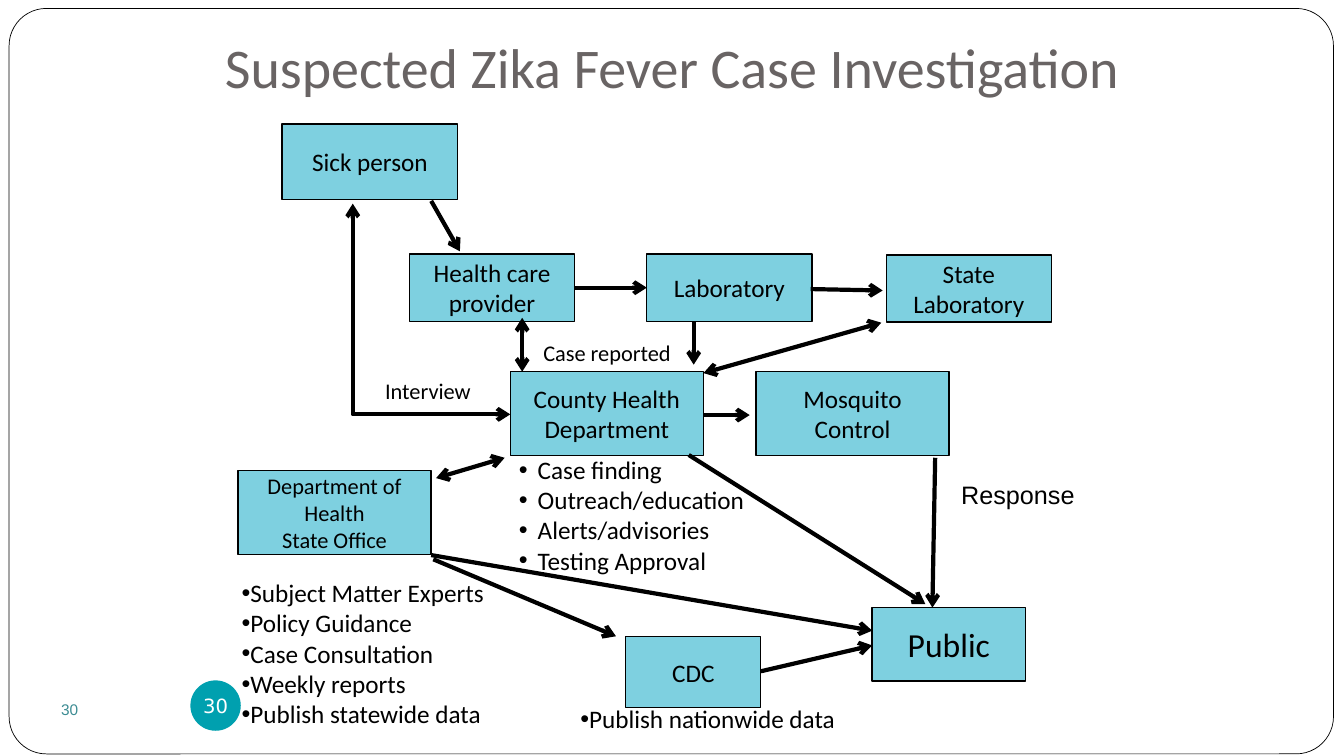
from pptx import Presentation
from pptx.dml.color import RGBColor
from pptx.enum.shapes import MSO_CONNECTOR, MSO_SHAPE
from pptx.enum.text import MSO_ANCHOR, MSO_AUTO_SIZE, PP_ALIGN
from pptx.oxml.ns import qn
from pptx.util import Pt
from lxml.etree import SubElement


def hue(code):
    return RGBColor.from_string(code)


class Chart:
    """Holds the style and the slide, and draws each kind of element."""

    face = "Calibri"
    ink = "000000"
    tint = "7ED0E0"

    def __init__(self, slide):
        self.shapes = slide.shapes

    def words(self, frame, lines, size, face=None, ink=None, align=PP_ALIGN.LEFT,
              mark=False, hang=0):
        for i, line in enumerate(lines):
            para = frame.add_paragraph() if i else frame.paragraphs[0]
            para.text = line
            para.alignment = align
            if mark:
                props = para._p.get_or_add_pPr()
                props.set("marL", str(Pt(hang)))
                props.set("indent", str(-Pt(hang)))
                SubElement(props, qn("a:buFont")).set("typeface", "Arial")
                SubElement(props, qn("a:buChar")).set("char", "•")
            para.font.size = Pt(size)
            para.font.name = face or self.face
            para.font.color.rgb = hue(ink or self.ink)

    def shape(self, kind, area, fill=None, line=None):
        item = self.shapes.add_shape(kind, *map(Pt, area))
        item.shadow.inherit = False
        if fill:
            item.fill.solid()
            item.fill.fore_color.rgb = hue(fill)
        else:
            item.fill.background()
        if line:
            item.line.color.rgb = hue(self.ink)
            item.line.width = Pt(line)
        else:
            item.line.fill.background()
        return item

    def frame(self, area):
        item = self.shape(MSO_SHAPE.ROUNDED_RECTANGLE, area, "FFFFFF", 0.5)
        item.adjustments[0] = 0.05

    def title(self, area, text):
        frame = self.shapes.add_textbox(*map(Pt, area)).text_frame
        frame.word_wrap = True
        frame.vertical_anchor = MSO_ANCHOR.BOTTOM
        frame.margin_bottom = Pt(7.2)
        self.words(frame, [text], 40, ink="696464", align=PP_ALIGN.CENTER)

    def box(self, area, text, size=18):
        frame = self.shape(MSO_SHAPE.RECTANGLE, area, self.tint, 1).text_frame
        frame.word_wrap = True
        frame.vertical_anchor = MSO_ANCHOR.MIDDLE
        self.words(frame, [text], size, align=PP_ALIGN.CENTER)

    def label(self, area, lines, size=18, **style):
        frame = self.shapes.add_textbox(*map(Pt, area)).text_frame
        frame.word_wrap = False
        frame.auto_size = MSO_AUTO_SIZE.SHAPE_TO_FIT_TEXT
        self.words(frame, lines, size, **style)

    def badge(self, area, text, size, face, ink, align, fill=None):
        frame = self.shape(MSO_SHAPE.OVAL, area, fill).text_frame
        frame.word_wrap = False
        frame.vertical_anchor = MSO_ANCHOR.MIDDLE
        frame.margin_left = frame.margin_right = 0
        frame.margin_top = frame.margin_bottom = 0
        self.words(frame, [text], size, face, ink, align)

    def arrow(self, ends, both=False, bent=False):
        kind = MSO_CONNECTOR.ELBOW if bent else MSO_CONNECTOR.STRAIGHT
        item = self.shapes.add_connector(kind, *map(Pt, ends))
        item.line.color.rgb = hue(self.ink)
        item.line.width = Pt(3)
        props = item._element.spPr
        if bent:
            props.find(qn("a:prstGeom")).set("prst", "bentConnector2")
        for tip in ("a:headEnd", "a:tailEnd") if both else ("a:tailEnd",):
            SubElement(props.find(qn("a:ln")), qn(tip)).set("type", "arrow")
        SubElement(props, qn("a:effectLst"))


def main():
    deck = Presentation()
    deck.slide_width, deck.slide_height = Pt(960), Pt(540)
    chart = Chart(deck.slides.add_slide(deck.slide_layouts[6]))

    chart.frame((6.5, 6, 946, 532.5))
    chart.title((120, 12.5, 720, 66), "Suspected Zika Fever Case Investigation")
    chart.badge((15, 489, 48, 36), "30", 11, "Arial", "3C8C93", PP_ALIGN.RIGHT)

    small, large = (118, 48), (138, 60)
    for spot, span, text, size in (
        ((201.5, 88.5), (125.5, 54), "Sick person", 18),
        ((292.5, 181.5), small, "Health care provider", 18),
        ((462, 181.5), small, "Laboratory", 18),
        ((633, 182), small, "State Laboratory", 18),
        ((364.5, 265.5), large, "County Health Department", 18),
        ((540, 265.5), large, "Mosquito Control", 18),
        ((170, 336), large, "Department of Health\vState Office", 16),
        ((447, 454.5), (96.5, 51), "CDC", 18),
        ((623, 434), (109.5, 52.5), "Public", 24),
    ):
        chart.box(spot + span, text, size)

    for ends in (
        (308, 143.5, 328.5, 179.5),
        (410, 205.5, 462, 205.5),
        (579, 206.5, 630.5, 207.5),
        (495.5, 229.5, 495.5, 260.5),
        (502.5, 296.5, 535.5, 296.5),
        (492, 325, 661, 431.5),
        (668, 327, 666, 434),
        (308, 396.5, 623, 450.5),
        (309.5, 399.5, 440, 454.5),
        (543.5, 479.5, 623, 461),
    ):
        chart.arrow(ends)
    for ends in (
        (311.5, 341.5, 360.5, 327),
        (502.5, 266.5, 629.5, 230.5),
        (373, 265.5, 373, 227),
    ):
        chart.arrow(ends, both=True)
    chart.arrow((364.5, 296, 252, 145.5), both=True, bent=True)

    chart.label((381, 239, 107.5, 26.5), ["Case reported"], 16)
    chart.label((268, 265.5, 79, 26.5), ["Interview"], 16)
    chart.label((679.5, 339, 96.5, 29), ["Response"], face="Arial")
    chart.label((363.5, 321, 178, 94.5), [
        "Case finding", "Outreach/education", "Alerts/advisories",
        "Testing Approval"], mark=True, hang=13.5)
    chart.badge((136, 486, 36, 36), "30", 14, "DejaVu Sans", "FFFFFF",
                PP_ALIGN.CENTER, "00A0AF")
    chart.label((165.5, 409, 192, 116.5), [
        "Subject Matter Experts", "Policy Guidance", "Case Consultation",
        "Weekly reports", "Publish statewide data"], mark=True)
    chart.label((407.5, 499, 201.5, 29), ["Publish nationwide data"], mark=True)

    deck.save("out.pptx")


if __name__ == "__main__":
    main()
